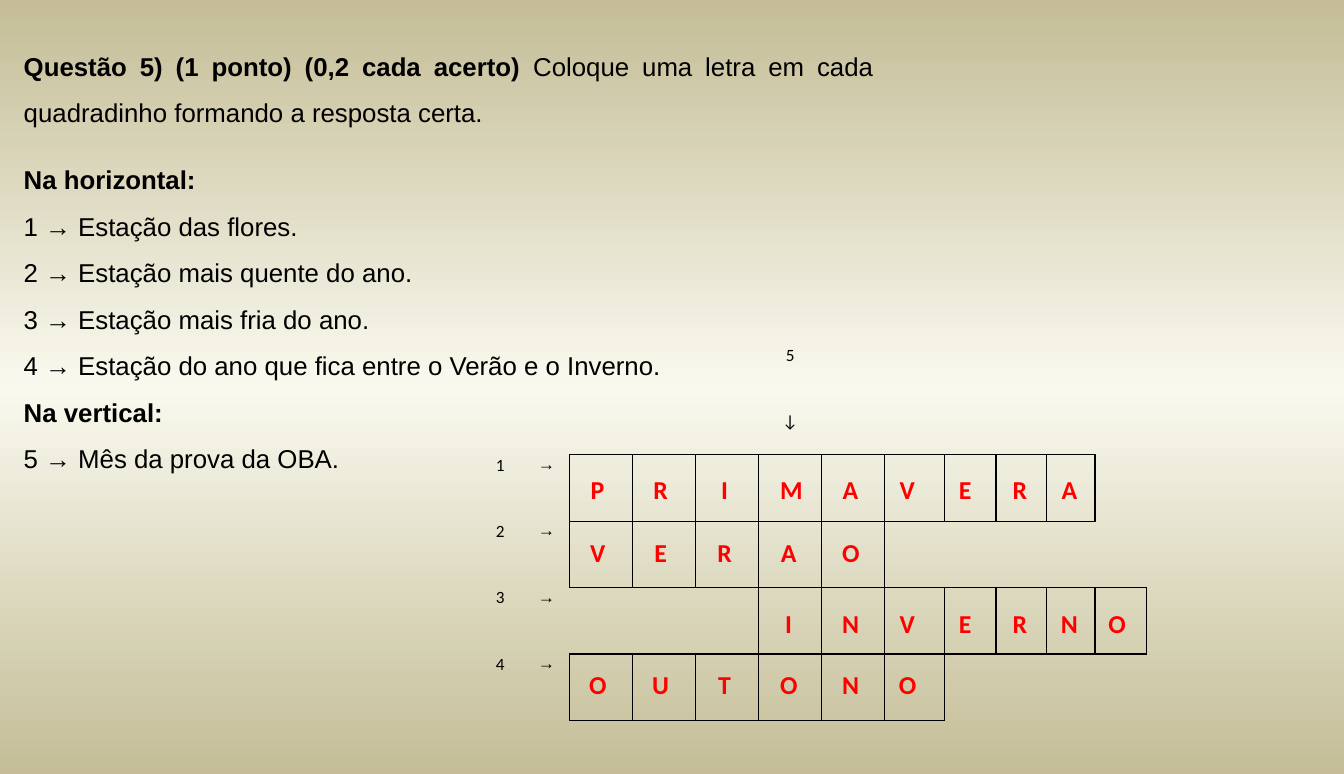
from copy import deepcopy

from lxml.etree import SubElement
from pptx import Presentation
from pptx.dml.color import RGBColor
from pptx.enum.text import MSO_ANCHOR, MSO_AUTO_SIZE, PP_ALIGN
from pptx.oxml.ns import qn
from pptx.util import Inches, Pt

BLACK, RED = "000000", "FF0000"
CLUES = [
    ("Na horizontal:", True),
    ("1 → Estação das flores.", False),
    ("2 → Estação mais quente do ano.", False),
    ("3 → Estação mais fria do ano.", False),
    ("4 → Estação do ano que fica entre o Verão e o Inverno.", False),
    ("Na vertical:", True),
    ("5 → Mês da prova da OBA.", False),
]
# Each word with its first letter column and the top of its letters
WORDS = [("PRIMAVERA", 0, 4.54), ("VERAO", 0, 5.15), ("INVERNO", 3, 5.84), ("OUTONO", 0, 6.43)]
LETTER_CENTERS = [5.79, 6.4, 7.02, 7.64, 8.24, 8.79, 9.35, 9.88, 10.36, 10.82]
LABEL_COLUMNS = 2
LABEL_ROWS = 2
COLUMN_WIDTHS = [0.45] * 2 + [0.61] * 5 + [0.58, 0.5, 0.49, 0.47, 0.5]
ROW_COUNT = LABEL_ROWS + len(WORDS)


def color(hex_string):
    return RGBColor.from_string(hex_string)


def add_text(paragraph, text, size=18, font="Arial", bold=False, fill=BLACK,
             align=None, line_spacing=None):
    run = paragraph.add_run()
    run.text = text
    run.font.size = Pt(size)
    run.font.name = font
    run.font.bold = bold
    run.font.color.rgb = color(fill)
    if align is not None:
        paragraph.alignment = align
    if line_spacing is not None:
        paragraph.line_spacing = line_spacing


def place(shape, box):
    shape.left, shape.top, shape.width, shape.height = (Inches(value) for value in box)


def set_background(slide):
    fill = slide.background.fill
    fill.gradient()
    fill.gradient_angle = 90
    stop_list = slide.element.find(".//" + qn("a:gsLst"))
    stop_list.insert(1, deepcopy(stop_list[0]))
    stops = [(0, "C4BD97"), (0.5, "F9F9EE"), (1, "C4BD97")]
    for stop, (position, hex_string) in zip(fill.gradient_stops, stops):
        stop.position = position
        stop.color.rgb = color(hex_string)


def fill_question(title, box):
    place(title, box)
    frame = title.text_frame
    frame.auto_size = MSO_AUTO_SIZE.NONE
    frame.vertical_anchor = MSO_ANCHOR.TOP
    paragraph = frame.paragraphs[0]
    add_text(paragraph, "Questão 5) (1 ponto) (0,2 cada acerto) ", bold=True,
             align=PP_ALIGN.JUSTIFY, line_spacing=1.5)
    add_text(paragraph, "Coloque uma letra em cada quadradinho formando a resposta certa.")


def fill_clues(body, box):
    place(body, box)
    frame = body.text_frame
    frame.auto_size = MSO_AUTO_SIZE.NONE
    for index, (clue, bold) in enumerate(CLUES):
        paragraph = frame.add_paragraph() if index else frame.paragraphs[0]
        properties = paragraph._p.get_or_add_pPr()
        properties.set("marL", "0")
        properties.set("indent", "0")
        SubElement(properties, qn("a:buNone"))
        paragraph.space_before = Pt(0)
        add_text(paragraph, clue, bold=bold, line_spacing=1.5)


def is_square(row, column):
    """Tell whether a table cell holds a letter of a word."""
    if not LABEL_ROWS <= row < ROW_COUNT:
        return False
    word, start, _ = WORDS[row - LABEL_ROWS]
    return start <= column - LABEL_COLUMNS < start + len(word)


def set_borders(cell, row, column):
    """Draw each side that touches a letter square and clear the others."""
    properties = cell._tc.get_or_add_tcPr()
    neighbours = {"a:lnL": (row, column - 1), "a:lnR": (row, column + 1),
                  "a:lnT": (row - 1, column), "a:lnB": (row + 1, column)}
    for tag, neighbour in neighbours.items():
        line = SubElement(properties, qn(tag), w=str(Pt(1)))
        if is_square(row, column) or is_square(*neighbour):
            SubElement(SubElement(line, qn("a:solidFill")), qn("a:srgbClr"), val=BLACK)
        else:
            SubElement(line, qn("a:noFill"))


def add_label(cell, text, font="Calibri", anchor=MSO_ANCHOR.TOP):
    cell.margin_left = cell.margin_right = Inches(0.07)
    cell.margin_top = cell.margin_bottom = 0
    cell.vertical_anchor = anchor
    add_text(cell.text_frame.paragraphs[0], text, size=12, font=font, align=PP_ALIGN.CENTER)


def add_crossword(slide, box):
    frame = slide.shapes.add_table(ROW_COUNT, len(COLUMN_WIDTHS),
                                   *(Inches(value) for value in box))
    table = frame.table
    table.first_row = table.horz_banding = False
    for column, width in zip(table.columns, COLUMN_WIDTHS):
        column.width = Inches(width)
    for row in range(ROW_COUNT):
        for column in range(len(COLUMN_WIDTHS)):
            cell = table.cell(row, column)
            set_borders(cell, row, column)
            cell.fill.background()
    for row, text in enumerate("5↓"):
        add_label(table.cell(row, 5), text, anchor=MSO_ANCHOR.MIDDLE)
    for number in range(1, len(WORDS) + 1):
        row = LABEL_ROWS + number - 1
        add_label(table.cell(row, 0), str(number))
        add_label(table.cell(row, 1), "→", font="Arial")


def add_answers(slide, width=0.36, height=0.4):
    for word, start, top in WORDS:
        for letter, center in zip(word, LETTER_CENTERS[start:]):
            shape = slide.shapes.add_textbox(Inches(center - width / 2), Inches(top),
                                             Inches(width), Inches(height))
            shape.text_frame.word_wrap = False
            add_text(shape.text_frame.paragraphs[0], letter, font="Calibri", bold=True,
                     fill=RED, align=PP_ALIGN.CENTER)


def main():
    presentation = Presentation()
    presentation.slide_width = Inches(13.02)
    presentation.slide_height = Inches(7.5)
    slide = presentation.slides.add_slide(presentation.slide_layouts[1])
    set_background(slide)
    fill_question(slide.shapes.title, (0.13, 0.29, 8.43, 1.01))
    fill_clues(slide.placeholders[1], (0.13, 1.39, 6.61, 3.28))
    add_crossword(slide, (4.62, 3.12, sum(COLUMN_WIDTHS), 3.86))
    add_answers(slide)
    presentation.save("out.pptx")


if __name__ == "__main__":
    main()
